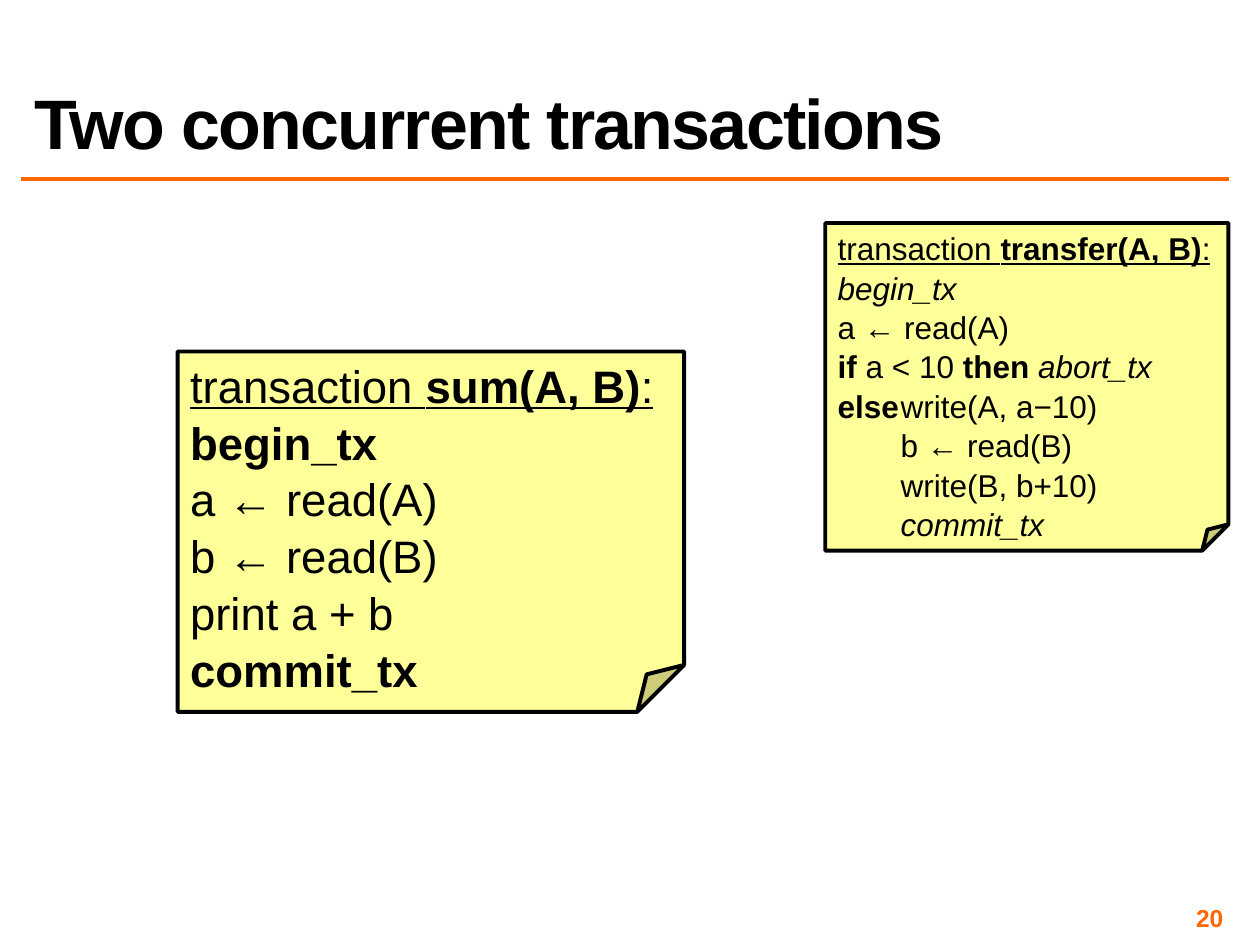
from lxml import etree
from pptx import Presentation
from pptx.dml.color import RGBColor
from pptx.enum.shapes import MSO_CONNECTOR, MSO_SHAPE
from pptx.enum.text import MSO_ANCHOR, PP_ALIGN
from pptx.oxml.ns import qn
from pptx.util import Inches, Pt

BLACK, ORANGE, YELLOW = "000000", "FF6600", "FFFF99"

# Each line is a list of (text, style) runs; style letters: b, i, u.
SUM_LINES = [
    [("transaction ", "u"), ("sum(A, B)", "bu"), (":", "u")],
    [("begin_tx", "b")],
    [("a ← read(A)", "")],
    [("b ← read(B)", "")],
    [("print a + b", "")],
    [("commit_tx", "b")],
]
TRANSFER_LINES = [
    [("transaction ", "u"), ("transfer(A, B)", "bu"), (":", "u")],
    [("begin_tx", "i")],
    [("a ← read(A)", "")],
    [("if", "b"), (" a < 10 ", ""), ("then ", "b"), ("abort_tx", "i")],
    [("else", "b"), ("\twrite(A, a−10)", "")],
    [("\tb ← read(B)", "")],
    [("\twrite(B, b+10)", "")],
    [("\t", "b"), ("commit_tx", "i")],
]


def color(hex_string):
    return RGBColor.from_string(hex_string)


def add_span(para, text, size, style="", hex_color=BLACK):
    span = para.add_run()
    span.text = text
    font = span.font
    font.name, font.size = "Arial", Pt(size)
    font.color.rgb = color(hex_color)
    font.bold, font.italic, font.underline = (key in style for key in "biu")
    return span


def place_title(page, box, text):
    title = page.shapes.title
    title.left, title.top, title.width, title.height = map(Inches, box)
    frame = title.text_frame
    frame.vertical_anchor = MSO_ANCHOR.BOTTOM
    para = frame.paragraphs[0]
    para.alignment = PP_ALIGN.LEFT
    para.line_spacing = 0.8
    span = add_span(para, text, 40, "b")
    span.font._element.set("spc", "-100")


def add_rule(page, left, right, top):
    rule = page.shapes.add_connector(
        MSO_CONNECTOR.STRAIGHT, Inches(left), Inches(top), Inches(right), Inches(top))
    rule.line.color.rgb = color(ORANGE)
    rule.line.width = Pt(2)
    etree.SubElement(rule._element.spPr, qn("a:effectLst"))


def add_page_number(page, box, number):
    frame = page.shapes.add_textbox(*map(Inches, box)).text_frame
    frame.word_wrap = True
    frame.vertical_anchor = MSO_ANCHOR.MIDDLE
    frame.margin_left = frame.margin_right = Inches(0.04)
    frame.margin_top = frame.margin_bottom = Inches(0.04)
    para = frame.paragraphs[0]
    para.alignment = PP_ALIGN.RIGHT
    add_span(para, number, 14, "b", ORANGE)


def set_fold(note, fold):
    """Size the folded corner as a share of the shorter side."""
    guides = note._element.spPr.find(qn("a:prstGeom")).get_or_add_avLst()
    etree.SubElement(guides, qn("a:gd"), name="adj", fmla=f"val {round(fold * 100000)}")


def add_note(page, box, fold, size, lines):
    """Add a folded sheet of pseudocode."""
    note = page.shapes.add_shape(MSO_SHAPE.FOLDED_CORNER, *map(Inches, box))
    set_fold(note, fold)
    note.shadow.inherit = False
    note.fill.solid()
    note.fill.fore_color.rgb = color(YELLOW)
    note.line.color.rgb = color(BLACK)
    note.line.width = Pt(2.25)
    frame = note.text_frame
    frame.word_wrap = True
    frame.vertical_anchor = MSO_ANCHOR.TOP
    for index, line in enumerate(lines):
        para = frame.add_paragraph() if index else frame.paragraphs[0]
        para.alignment = PP_ALIGN.LEFT
        para.space_before = Pt(size * 0.05)
        for text, style in line:
            add_span(para, text, size, style)


def main():
    deck = Presentation()
    deck.slide_width, deck.slide_height = Inches(10), Inches(7.5)
    page = deck.slides.add_slide(deck.slide_layouts[5])
    add_rule(page, 0.17, 9.75, 1.42)
    add_page_number(page, (7.42, 7.17, 2.33, 0.23), "20")
    place_title(page, (0.17, 0.17, 9.58, 1.17), "Two concurrent transactions")
    add_note(page, (1.41, 2.79, 4.02, 2.86), 0.13, 26, SUM_LINES)
    add_note(page, (6.55, 1.77, 3.2, 2.6), 0.08, 18, TRANSFER_LINES)
    deck.save("out.pptx")


if __name__ == "__main__":
    main()
